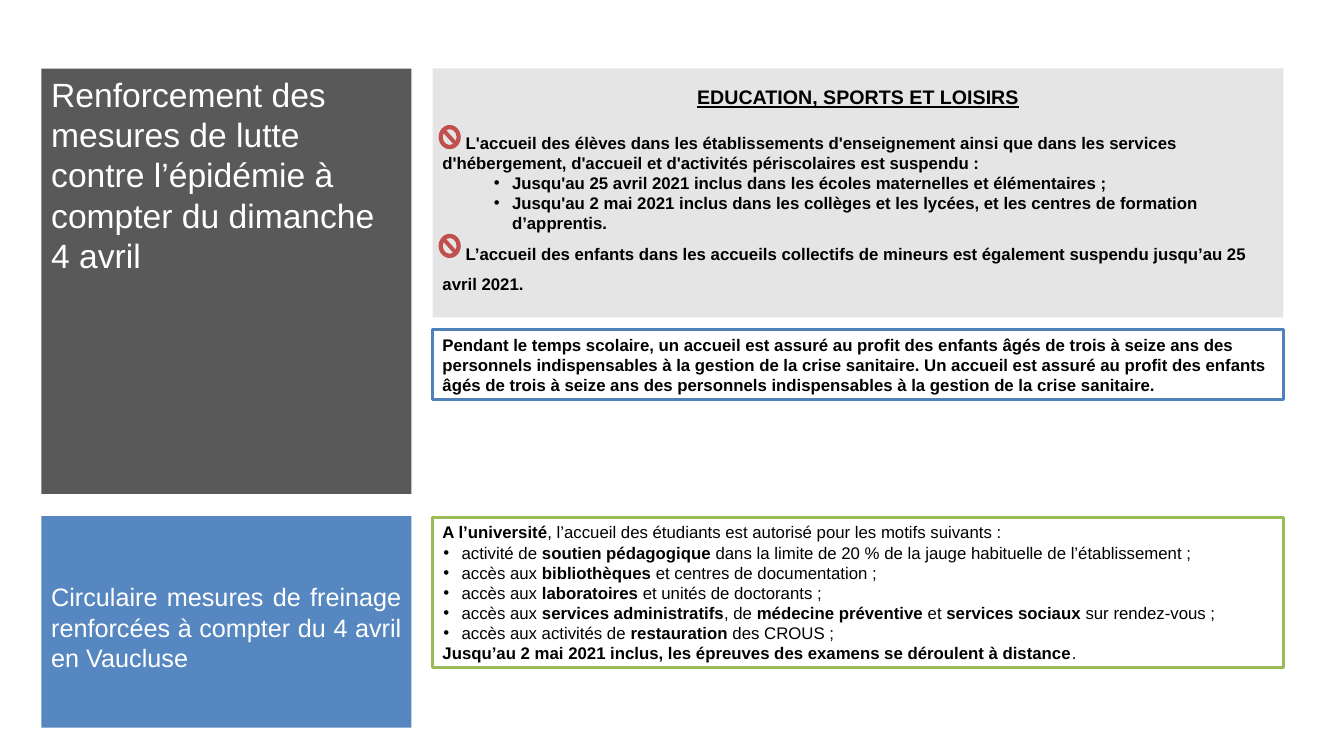
from lxml import etree
from pptx import Presentation
from pptx.dml.color import RGBColor
from pptx.enum.shapes import MSO_SHAPE
from pptx.enum.text import MSO_ANCHOR, PP_ALIGN
from pptx.oxml.ns import qn
from pptx.util import Inches, Pt

RECT, BAN = MSO_SHAPE.RECTANGLE, MSO_SHAPE.NO_SYMBOL
TOP = MSO_ANCHOR.TOP
LEFT, CENTER, JUSTIFY = PP_ALIGN.LEFT, PP_ALIGN.CENTER, PP_ALIGN.JUSTIFY

BLACK = RGBColor(0x00, 0x00, 0x00)
WHITE = RGBColor(0xFF, 0xFF, 0xFF)
DARK = RGBColor(0x59, 0x59, 0x59)
GRAY = RGBColor(0x80, 0x80, 0x80)
BLUE = RGBColor(0x4F, 0x81, 0xBD)
GREEN = RGBColor(0x9B, 0xBB, 0x59)
RED = RGBColor(0xC0, 0x50, 0x4D)

FONT = "Arial"
SIDE_X, SIDE_W = 0.41, 3.67
MAIN_X, MAIN_W = 4.29, 8.44
HANG = -0.18

# Text between asterisks is bold
CAMPUS = [
    "activité de *soutien pédagogique* dans la limite de 20 % de la jauge habituelle de l’établissement ;",
    "accès aux *bibliothèques* et centres de documentation ;",
    "accès aux *laboratoires* et unités de doctorants ;",
    "accès aux *services administratifs*, de *médecine préventive* et *services sociaux* sur rendez-vous ;",
    "accès aux activités de *restauration* des CROUS ;",
]
DATES = [
    "*Jusqu'au 25 avril 2021 inclus dans les écoles maternelles et élémentaires ;*",
    "*Jusqu'au 2 mai 2021 inclus dans les collèges et les lycées, et les centres de formation d’apprentis.*",
]
CARE = ("*Pendant le temps scolaire, un accueil est assuré au profit des enfants âgés de trois à "
        "seize ans des personnels indispensables à la gestion de la crise sanitaire. Un accueil est "
        "assuré au profit des enfants âgés de trois à seize ans des personnels indispensables à la "
        "gestion de la crise sanitaire.*")


def add_panel(slide, x, y, w, h, fill, line=None, alpha=None, top=0.05):
    """Draw a rectangle and return its text frame."""
    panel = slide.shapes.add_shape(RECT, Inches(x), Inches(y), Inches(w), Inches(h))
    panel.shadow.inherit = False
    panel.fill.solid()
    panel.fill.fore_color.rgb = fill
    if alpha is not None:
        tint = panel.fill._xPr.find(qn("a:solidFill"))[0]
        etree.SubElement(tint, qn("a:alpha")).set("val", str(alpha * 1000))
    if line is None:
        panel.line.fill.background()
    else:
        panel.line.color.rgb = line
        panel.line.width = Pt(2)
    frame = panel.text_frame
    frame.word_wrap = True
    frame.vertical_anchor = TOP
    frame.margin_left = frame.margin_right = Inches(0.1)
    frame.margin_top, frame.margin_bottom = Inches(top), Inches(0.05)
    return frame


def add_para(frame, text, size=12, color=BLACK, align=LEFT, spacing=None):
    """Fill the empty first paragraph, or append one."""
    para = frame.paragraphs[0]
    if para.runs:
        para = frame.add_paragraph()
    para.alignment = align
    if spacing:
        para.line_spacing = spacing
    for i, part in enumerate(text.split("*")):
        if part:
            run = para.add_run()
            run.text = part
            run.font.name = FONT
            run.font.size = Pt(size)
            run.font.color.rgb = color
            run.font.bold = i % 2 == 1
    return para


def set_indent(para, left, first):
    props = para._p.get_or_add_pPr()
    props.set("marL", str(Inches(left)))
    props.set("indent", str(Inches(first)))
    return props


def add_list(frame, items, left):
    for item in items:
        props = set_indent(add_para(frame, item), left, HANG)
        etree.SubElement(props, qn("a:buFont")).set("typeface", FONT)
        etree.SubElement(props, qn("a:buChar")).set("char", "•")


def add_ban(slide, y):
    sign = slide.shapes.add_shape(BAN, Inches(4.35), Inches(y), Inches(0.22), Inches(0.24))
    sign.shadow.inherit = False
    sign.adjustments[0] = 0.188
    sign.fill.solid()
    sign.fill.fore_color.rgb = RED
    sign.line.fill.background()


def main():
    deck = Presentation()
    deck.slide_width, deck.slide_height = Inches(13.33), Inches(7.5)
    slide = deck.slides.add_slide(deck.slide_layouts[6])

    # Side panels
    title = add_panel(slide, SIDE_X, 0.68, SIDE_W, 4.22, DARK)
    add_para(title, "Renforcement des mesures de lutte contre l’épidémie à compter du dimanche 4 avril",
             24, WHITE)
    note = add_panel(slide, SIDE_X, 5.12, SIDE_W, 2.1, BLUE, alpha=95, top=0.65)
    add_para(note, "Circulaire mesures de freinage renforcées à compter du 4 avril en Vaucluse",
             18, WHITE, JUSTIFY)

    # Schools, sports and leisure
    school = add_panel(slide, MAIN_X, 0.68, MAIN_W, 2.47, GRAY, alpha=20)
    head = add_para(school, "*EDUCATION, SPORTS ET LOISIRS*", 14, align=CENTER, spacing=1.5)
    head.runs[0].font.underline = True
    head.space_after = Pt(17)
    pupils = add_para(school, "*L'accueil des élèves dans les établissements d'enseignement ainsi que dans "
                              "les services d'hébergement, d'accueil et d'activités périscolaires est suspendu :*")
    set_indent(pupils, 0, 0.23)
    add_list(school, DATES, 0.69)
    minors = add_para(school, "*L’accueil des enfants dans les accueils collectifs de mineurs est également "
                              "suspendu jusqu’au 25 avril 2021.*", spacing=1.5)
    set_indent(minors, 0, 0.23)

    # University
    campus = add_panel(slide, MAIN_X, 5.13, MAIN_W, 1.49, WHITE, GREEN)
    add_para(campus, "*A l’université*, l’accueil des étudiants est autorisé pour les motifs suivants :")
    add_list(campus, CAMPUS, 0.19)
    add_para(campus, "*Jusqu’au 2 mai 2021 inclus, les épreuves des examens se déroulent à distance*.")

    # Child care
    care = add_panel(slide, MAIN_X, 3.27, MAIN_W, 0.69, WHITE, BLUE)
    add_para(care, CARE)

    # Prohibition signs
    for y in (1.24, 2.32):
        add_ban(slide, y)

    deck.save("out.pptx")


if __name__ == "__main__":
    main()
